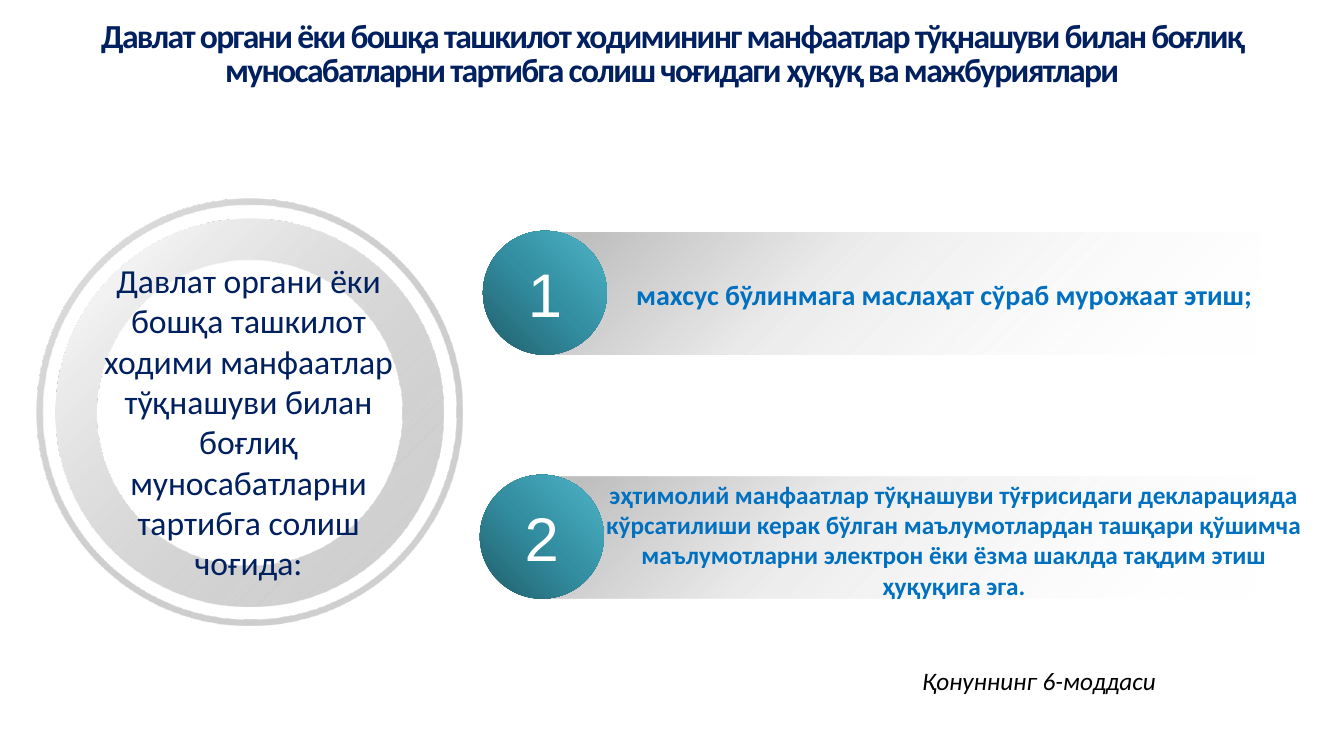
from lxml import etree
from pptx import Presentation
from pptx.dml.color import RGBColor
from pptx.enum.shapes import MSO_SHAPE
from pptx.enum.text import MSO_ANCHOR, PP_ALIGN
from pptx.oxml.ns import qn
from pptx.util import Inches, Pt

TITLE = ("Давлат органи ёки бошқа ташкилот ходимининг манфаатлар тўқнашуви билан боғлиқ "
         "муносабатларни тартибга солиш чоғидаги ҳуқуқ ва мажбуриятлари")
SUBJECT = ("Давлат органи ёки бошқа ташкилот ходими манфаатлар тўқнашуви билан боғлиқ "
           "муносабатларни тартибга солиш чоғида:")
ARTICLE = "Қонуннинг 6-моддаси "

# Each right: number circle corner, wording, wording box, wording size
RIGHTS = [
    ((4.79, 2.29), "махсус бўлинмага маслаҳат сўраб мурожаат этиш;",
     (6.16, 2.7, 6.41, 0.44), 20),
    ((4.76, 4.71), "эҳтимолий манфаатлар тўқнашуви тўғрисидаги декларацияда кўрсатилиши "
     "керак бўлган маълумотлардан ташқари қўшимча маълумотларни электрон ёки ёзма "
     "шаклда тақдим этиш ҳуқуқига эга.",
     (5.84, 4.7, 7.24, 1.31), 18),
]

# Gradient stops: position %, colour, opacity %
THEME = {
    "body_font": "Calibri", "number_font": "Arial",
    "navy": "002060", "blue": "0070C0", "black": "000000", "white": "FFFFFF",
    "heading_size": 24, "number_size": 44, "article_size": 18,
    "inner_ring": [(16, "F2F2F2", 100), (87, "A6A6A6", 52)],
    "outer_ring": [(16, "D9D9D9", 100), (87, "A6A6A6", 52)],
    "bar": [(5, "BFBFBF", 100), (37, "BFBFBF", 31), (100, "FFFFFF", 0)],
    "circle": [(0, "215E6B", 100), (50, "328EA0", 100), (100, "50B4C8", 100)],
}

RING_CENTRE = (2.475, 4.09)
RINGS = [(3.85, 0.107, "inner_ring"), (4.23, 0.015, "outer_ring")]
CIRCLE_SIZE = 1.23
BAR_OFFSET = (0.63, 0.02)
BAR_SIZE = (7.07, 1.21)


def write(shape, wording, size, colour, font=THEME["body_font"], bold=False, italic=False):
    frame = shape.text_frame
    frame.word_wrap = True
    paragraph = frame.paragraphs[0]
    paragraph.text = wording
    paragraph.alignment = PP_ALIGN.CENTER
    run = paragraph.runs[0]
    run.font.size, run.font.name = Pt(size), font
    run.font.bold, run.font.italic = bold, italic
    run.font.color.rgb = RGBColor.from_string(THEME[colour])
    return paragraph


def add_label(shapes, box, wording, size, colour, anchor=MSO_ANCHOR.TOP, **style):
    label = shapes.add_textbox(*map(Inches, box))
    label.text_frame.vertical_anchor = anchor
    return write(label, wording, size, colour, **style)


def add_gradient_shape(shapes, preset, box, stops, clockwise_angle):
    shape = shapes.add_shape(preset, *map(Inches, box))
    shape.shadow.inherit = False
    shape.line.fill.background()
    shape.fill.gradient()
    shape.fill.gradient_angle = 360 - clockwise_angle
    stop_list = next(shape.element.iter(qn("a:gsLst")))
    for old_stop in list(stop_list):
        stop_list.remove(old_stop)
    for position, colour, opacity in THEME[stops]:
        stop = etree.SubElement(stop_list, qn("a:gs"), pos=str(position * 1000))
        tone = etree.SubElement(stop, qn("a:srgbClr"), val=colour)
        if opacity < 100:
            etree.SubElement(tone, qn("a:alpha"), val=str(opacity * 1000))
    return shape


def add_right(shapes, number, corner, wording, wording_box, size):
    left, top = corner
    add_gradient_shape(shapes, MSO_SHAPE.RECTANGLE,
                       (left + BAR_OFFSET[0], top + BAR_OFFSET[1], *BAR_SIZE), "bar", 45)
    add_label(shapes, wording_box, wording, size, "blue", MSO_ANCHOR.MIDDLE, bold=True)
    circle = add_gradient_shape(shapes, MSO_SHAPE.OVAL,
                                (left, top, CIRCLE_SIZE, CIRCLE_SIZE), "circle", 315)
    circle.text_frame.vertical_anchor = MSO_ANCHOR.MIDDLE
    write(circle, str(number), THEME["number_size"], "white", THEME["number_font"])


def main():
    deck = Presentation()
    deck.slide_width, deck.slide_height = Inches(13.33), Inches(7.5)
    shapes = deck.slides.add_slide(deck.slide_layouts[6]).shapes

    title = add_label(shapes, (0, 0, 13.33, 1.09), TITLE, THEME["heading_size"], "navy",
                      MSO_ANCHOR.MIDDLE, bold=True)
    title.line_spacing = 0.85
    title.runs[0].font._element.set("spc", "-120")

    for diameter, thickness, stops in RINGS:
        left, top = (centre - diameter / 2 for centre in RING_CENTRE)
        ring = add_gradient_shape(shapes, MSO_SHAPE.DONUT,
                                  (left, top, diameter, diameter), stops, 45)
        ring.adjustments[0] = thickness

    for number, right in enumerate(RIGHTS, start=1):
        add_right(shapes.add_group_shape().shapes, number, *right)

    add_label(shapes, (0.74, 2.53, 3.45, 3.33), SUBJECT, THEME["heading_size"], "navy")
    add_label(shapes, (8.1, 6.55, 4.47, 0.4), ARTICLE, THEME["article_size"], "black",
              italic=True)
    deck.save("out.pptx")


if __name__ == "__main__":
    main()
